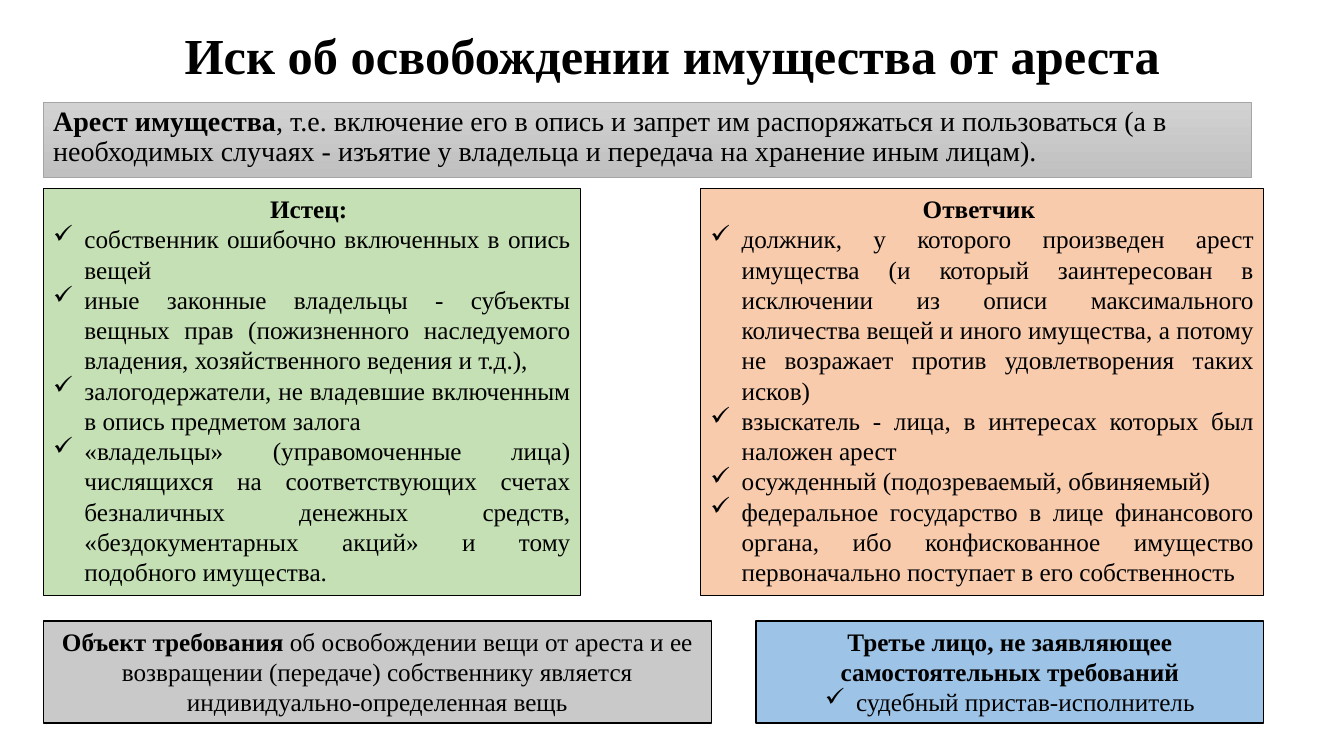
"""Build a slide on claims to release property from seizure."""
import pptx
import pptx.dml.color
import pptx.enum.shapes
import pptx.enum.text
import pptx.oxml.ns
import pptx.util
from lxml import etree
from pptx.util import Cm, Pt

FONT = "Times New Roman"
COLORS = {
    "black": "000000",
    "gray_top": "D2D2D2",
    "gray_bottom": "C0C0C0",
    "gray_line": "A5A5A5",
    "green": "C5E0B4",
    "orange": "F8CBAD",
    "blue": "9DC3E6",
    "gray": "C9C9C9",
}
ALIGN = pptx.enum.text.PP_ALIGN
ANCHOR = pptx.enum.text.MSO_ANCHOR


def rgb(name):
    return pptx.dml.color.RGBColor.from_string(COLORS[name])


def add_run(paragraph, text, size, bold=False):
    run = paragraph.add_run()
    run.text = text
    run.font.name = FONT
    run.font.size = Pt(size)
    run.font.bold = bold
    run.font.color.rgb = rgb("black")


presentation = pptx.Presentation()
presentation.slide_width = Cm(33.87)
presentation.slide_height = Cm(19.05)
slide = presentation.slides.add_slide(presentation.slide_layouts[5])

title = slide.shapes.title
title.left, title.top, title.width, title.height = Cm(2.34), Cm(0.38), Cm(29.21), Cm(2.18)
title.text_frame.vertical_anchor = ANCHOR.MIDDLE
title_paragraph = title.text_frame.paragraphs[0]
title_paragraph.alignment = ALIGN.CENTER
title_paragraph.line_spacing = 0.9
add_run(title_paragraph, "Иск об освобождении имущества от ареста", 36, True)

definition = slide.shapes.add_shape(
    pptx.enum.shapes.MSO_SHAPE.RECTANGLE, Cm(1.09), Cm(2.57), Cm(30.45), Cm(1.9))
definition.shadow.inherit = False
definition.fill.gradient()
definition.fill.gradient_angle = 270
for stop, name in zip(definition.fill.gradient_stops, ("gray_top", "gray_bottom")):
    stop.color.rgb = rgb(name)
    stop.position = 0 if name == "gray_top" else 1
definition.line.color.rgb = rgb("gray_line")
definition.line.width = Pt(0.5)
definition.text_frame.word_wrap = True
definition.text_frame.vertical_anchor = ANCHOR.TOP
definition_paragraph = definition.text_frame.paragraphs[0]
definition_paragraph.alignment = ALIGN.LEFT
definition_paragraph.line_spacing = 0.9
add_run(definition_paragraph, "Арест имущества", 20, True)
add_run(definition_paragraph, ", т.е. включение его в опись и запрет им распоряжаться и пользоваться "
        "(а в необходимых случаях - изъятие у владельца и передача на хранение иным лицам).", 20)

LEFT, RIGHT = 1.09, 31.85
PARTIES = (4.75, 10.26)
DETAILS = (15.65, 2.57)
boxes = [
    ("green", LEFT, 13.54, PARTIES, "Истец: ", "", ALIGN.JUSTIFY, [
        "собственник ошибочно включенных в опись вещей",
        "иные законные владельцы - субъекты вещных прав (пожизненного наследуемого владения, "
        "хозяйственного ведения и т.д.), ",
        "залогодержатели, не владевшие включенным в опись предметом залога ",
        "«владельцы» (управомоченные лица) числящихся на соответствующих счетах безналичных "
        "денежных средств, «бездокументарных акций» и тому подобного имущества. ",
    ]),
    ("orange", RIGHT - 14.2, 14.2, PARTIES, "Ответчик ", "", ALIGN.JUSTIFY, [
        "должник, у которого произведен арест имущества (и который заинтересован в исключении "
        "из описи максимального количества вещей и иного имущества, а потому не возражает "
        "против удовлетворения таких исков)",
        "взыскатель - лица, в интересах которых был наложен арест",
        "осужденный (подозреваемый, обвиняемый)",
        "федеральное государство в лице финансового органа, ибо конфискованное имущество "
        "первоначально поступает в его собственность",
    ]),
    ("blue", RIGHT - 12.8, 12.8, DETAILS, "Третье лицо, не заявляющее самостоятельных требований",
     "", ALIGN.CENTER, ["судебный пристав-исполнитель"]),
    ("gray", LEFT, 16.84, DETAILS, "Объект требования ",
     "об освобождении вещи от ареста и ее возвращении (передаче) собственнику является "
     "индивидуально-определенная вещь", ALIGN.CENTER, []),
]

for color, left, width, (top, height), heading, body, alignment, items in boxes:
    box = slide.shapes.add_shape(
        pptx.enum.shapes.MSO_SHAPE.RECTANGLE, Cm(left), Cm(top), Cm(width), Cm(height))
    box.shadow.inherit = False
    box.fill.solid()
    box.fill.fore_color.rgb = rgb(color)
    box.line.color.rgb = rgb("black")
    box.line.width = Pt(1)
    frame = box.text_frame
    frame.word_wrap = True
    frame.auto_size = pptx.enum.text.MSO_AUTO_SIZE.SHAPE_TO_FIT_TEXT
    frame.vertical_anchor = ANCHOR.TOP
    paragraph = frame.paragraphs[0]
    paragraph.alignment = ALIGN.CENTER
    add_run(paragraph, heading, 18, True)
    if body:
        add_run(paragraph, body, 18)
    for item in items:
        paragraph = frame.add_paragraph()
        paragraph.alignment = alignment
        properties = paragraph._p.get_or_add_pPr()
        properties.set("marL", str(Cm(0.79)))
        properties.set("indent", str(-Cm(0.79)))
        bullet = etree.SubElement(properties, pptx.oxml.ns.qn("a:buChar"))
        bullet.set("char", "✓")
        add_run(paragraph, item, 18)

presentation.save("out.pptx")
